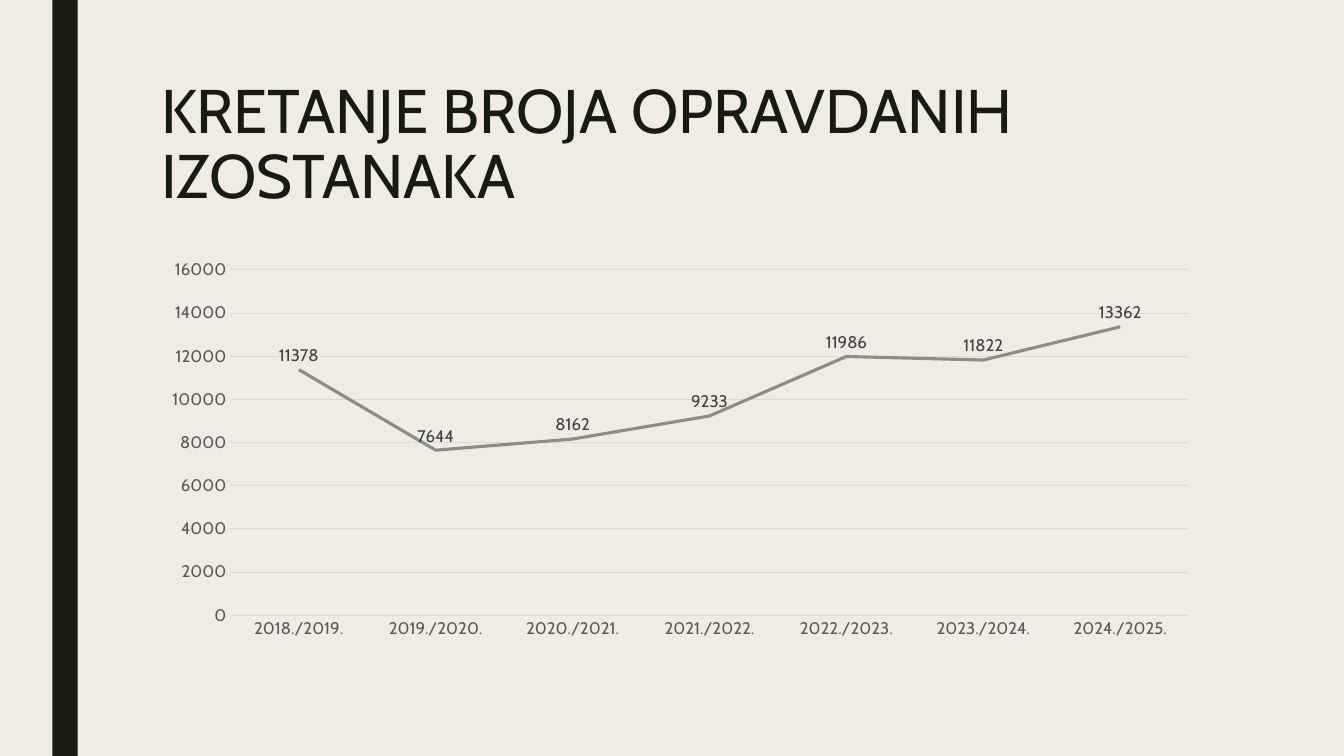
import pptx
import pptx.chart.data
import pptx.dml.color
import pptx.enum.chart
import pptx.enum.shapes
import pptx.enum.text
import pptx.util
from dataclasses import dataclass

Inches = pptx.util.Inches
Pt = pptx.util.Pt


@dataclass(frozen=True)
class Theme:
    """Colours, font and type sizes of the slide."""
    font: str = "Cabin"
    paper: str = "EFEDE3"
    ink: str = "191B0E"
    series: str = "8C8D86"
    grid: str = "D9D9D9"
    axis_text: str = "595959"
    label_text: str = "404040"
    title_size: int = 44
    chart_size: int = 12


class SlideBuilder:
    """Draws styled elements on one page."""

    def __init__(self, page, theme):
        self.page = page
        self.theme = theme

    def fill(self, target, colour):
        target.solid()
        target.fore_color.rgb = pptx.dml.color.RGBColor.from_string(colour)

    def style_font(self, font, size, colour):
        font.name = self.theme.font
        font.size = Pt(size)
        font.bold = False
        font.color.rgb = pptx.dml.color.RGBColor.from_string(colour)

    def style_line(self, line, colour, width):
        self.fill(line.fill, colour)
        line.width = Pt(width)

    def background(self):
        self.fill(self.page.background.fill, self.theme.paper)

    def band(self, left, top, width, height):
        shape = self.page.shapes.add_shape(
            pptx.enum.shapes.MSO_SHAPE.RECTANGLE,
            Inches(left), Inches(top), Inches(width), Inches(height))
        shape.shadow.inherit = False
        self.fill(shape.fill, self.theme.ink)
        shape.line.fill.background()

    def title(self, text, left, top, width, height):
        box = self.page.shapes.add_textbox(
            Inches(left), Inches(top), Inches(width), Inches(height))
        frame = box.text_frame
        frame.word_wrap = True
        frame.vertical_anchor = pptx.enum.text.MSO_ANCHOR.TOP
        para = frame.paragraphs[0]
        para.text = text
        para.line_spacing = 0.89
        self.style_font(para.font, self.theme.title_size, self.theme.ink)

    def style_axis(self, axis):
        axis.major_tick_mark = pptx.enum.chart.XL_TICK_MARK.NONE
        axis.minor_tick_mark = pptx.enum.chart.XL_TICK_MARK.NONE
        self.style_font(axis.tick_labels.font, self.theme.chart_size, self.theme.axis_text)

    def line_chart(self, name, points, left, top, width, height):
        data = pptx.chart.data.CategoryChartData()
        data.categories = list(points)
        data.add_series(name, list(points.values()))
        chart = self.page.shapes.add_chart(
            pptx.enum.chart.XL_CHART_TYPE.LINE,
            Inches(left), Inches(top), Inches(width), Inches(height), data).chart
        chart.has_legend = False
        chart.has_title = False
        self.style_font(chart.font, self.theme.chart_size, self.theme.axis_text)

        self.style_axis(chart.category_axis)
        self.style_line(chart.category_axis.format.line, self.theme.grid, 0.75)
        value_axis = chart.value_axis
        self.style_axis(value_axis)
        value_axis.format.line.fill.background()
        value_axis.minimum_scale = 0
        value_axis.maximum_scale = 16000
        value_axis.major_unit = 2000
        value_axis.has_major_gridlines = True
        self.style_line(value_axis.major_gridlines.format.line, self.theme.grid, 0.75)

        plot = chart.plots[0]
        plot.vary_by_categories = False
        series = plot.series[0]
        series.smooth = False
        series.marker.style = pptx.enum.chart.XL_MARKER_STYLE.NONE
        self.style_line(series.format.line, self.theme.series, 2.25)
        labels = series.data_labels
        labels.show_value = True
        labels.position = pptx.enum.chart.XL_LABEL_POSITION.ABOVE
        self.style_font(labels.font, self.theme.chart_size, self.theme.label_text)


def main():
    deck = pptx.Presentation()
    deck.slide_width = Inches(13.33)
    deck.slide_height = Inches(7.5)
    builder = SlideBuilder(deck.slides.add_slide(deck.slide_layouts[6]), Theme())
    builder.background()
    builder.band(0.52, 0, 0.25, 7.5)
    builder.title("KRETANJE BROJA OPRAVDANIH IZOSTANAKA", 1.5, 0.75, 10.5, 1.62)
    absences = [11378, 7644, 8162, 9233, 11986, 11822, 13362]
    points = {f"{year}./{year + 1}.": count for year, count in enumerate(absences, 2018)}
    builder.line_chart("Series 1", points, 1.5, 2.5, 10.5, 3.92)
    deck.save("out.pptx")


if __name__ == "__main__":
    main()
